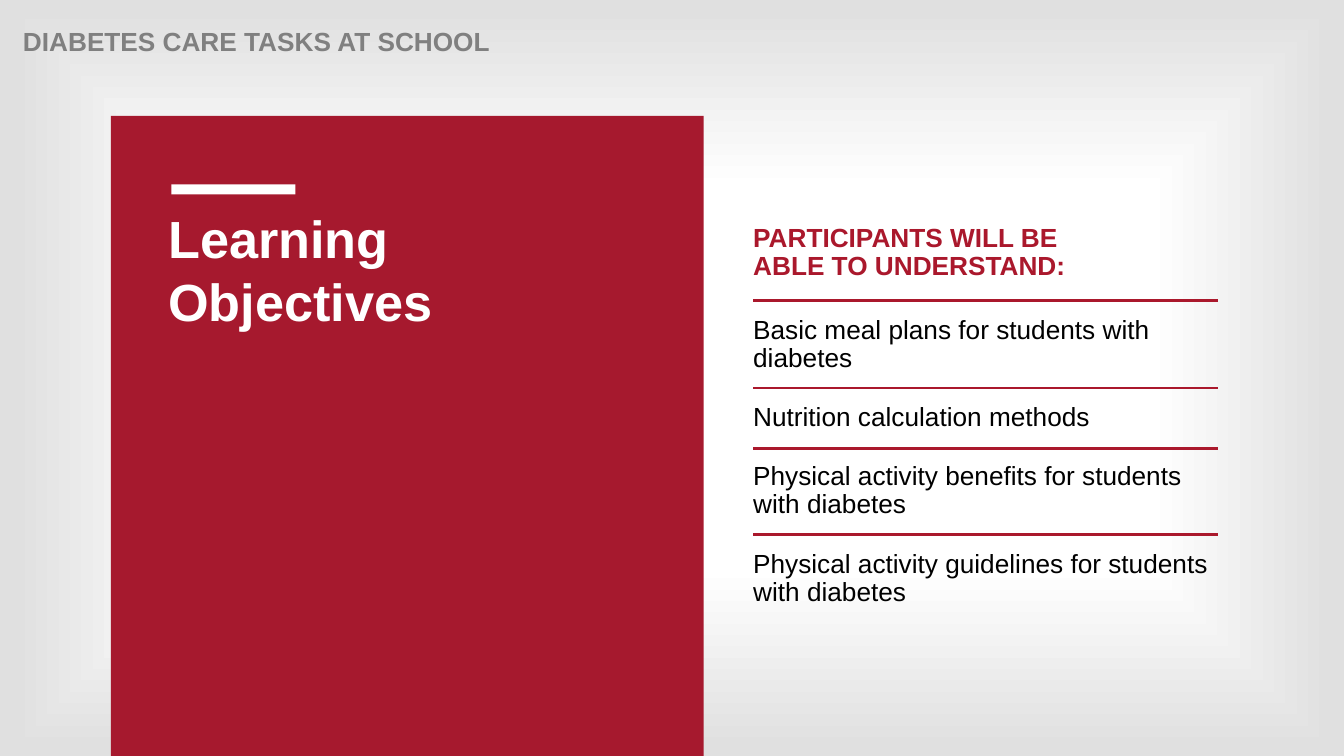
from dataclasses import dataclass

from pptx import Presentation
from pptx.dml.color import RGBColor as RGB
from pptx.enum.shapes import MSO_CONNECTOR as Conn, MSO_SHAPE as Form
from pptx.enum.text import MSO_ANCHOR as Anchor
from pptx.oxml import parse_xml as to_xml
from pptx.oxml.ns import nsdecls, qn
from pptx.slide import Slide
from pptx.util import Inches, Pt


@dataclass(frozen=True)
class Theme:
    """Colours and type sizes."""
    font: str = "Arial"
    panel: str = "A6192E"
    accent: str = "AA182C"
    white: str = "FFFFFF"
    edge: str = "E0E0E0"
    gray: str = "808080"
    black: str = "000000"
    body: float = 18.7
    title: float = 37.3
    rule: float = 2


@dataclass(frozen=True)
class Box:
    """A frame in inches."""
    left: float
    top: float
    width: float
    height: float

    def frame(self) -> tuple:
        """Return the frame as lengths."""
        return tuple(Inches(n) for n in (self.left, self.top, self.width, self.height))


@dataclass(frozen=True)
class Block:
    """A filled rectangle."""
    box: Box
    color: str


THEME = Theme()
LEFT, WIDTH = 7.47, 4.61
BLOCKS = [
    Block(Box(1.1, 1.15, 5.88, 6.35), THEME.panel),
    Block(Box(1.7, 1.83, 1.23, 0.1), THEME.white),
]
RULES = [2.98, 3.85, 4.45, 5.3]
GOALS = [
    "Basic meal plans for students with diabetes",
    "Nutrition calculation methods",
    "Physical activity benefits for students with diabetes",
    "Physical activity guidelines for students with diabetes",
]


def add_back(slide: Slide) -> None:
    """Fill the background with a gradient from the centre outwards."""
    slide.background.fill.solid()
    old = slide.element.find(".//" + qn("a:solidFill"))
    stops = "".join(
        f'<a:gs pos="{pos * 1000}"><a:srgbClr val="{color}"/></a:gs>'
        for pos, color in ((12, THEME.white), (50, THEME.white), (98, THEME.edge))
    )
    old.getparent().replace(old, to_xml(
        f'<a:gradFill {nsdecls("a")} rotWithShape="1"><a:gsLst>{stops}</a:gsLst>'
        '<a:path path="shape"><a:fillToRect l="50000" t="50000" r="50000" b="50000"/>'
        '</a:path></a:gradFill>'
    ))


def add_block(slide: Slide, block: Block) -> None:
    """Draw a plain rectangle."""
    shape = slide.shapes.add_shape(Form.RECTANGLE, *block.box.frame())
    shape.shadow.inherit = False
    shape.fill.solid()
    shape.fill.fore_color.rgb = RGB.from_string(block.color)
    shape.line.fill.background()


def add_rule(slide: Slide, top: float) -> None:
    """Draw a divider across the right column."""
    y = Inches(top)
    line = slide.shapes.add_connector(
        Conn.STRAIGHT, Inches(LEFT), y, Inches(LEFT + WIDTH), y)
    line.line.color.rgb = RGB.from_string(THEME.accent)
    line.line.width = Pt(THEME.rule)
    line.element.spPr.append(to_xml(f'<a:effectLst {nsdecls("a")}/>'))


def add_text(slide: Slide, box: Box, *lines: str, color: str, size: float = THEME.body,
             bold: bool = False, lead: float = 0.9, gap: float = 0,
             inset: bool = False) -> None:
    """Write paragraphs in one format."""
    frame = slide.shapes.add_textbox(*box.frame()).text_frame
    frame.word_wrap = True
    frame.vertical_anchor = Anchor.TOP
    if not inset:
        frame.margin_left = frame.margin_right = 0
        frame.margin_top = frame.margin_bottom = 0
    for i, line in enumerate(lines):
        para = frame.add_paragraph() if i else frame.paragraphs[0]
        para.text = line
        para.line_spacing = lead
        para.space_before = Pt(gap if i else 0)
        font = para.font
        font.name, font.size, font.bold = THEME.font, Pt(size), bold
        font.color.rgb = RGB.from_string(color)


def main() -> None:
    """Build and save the slide."""
    deck = Presentation()
    deck.slide_width, deck.slide_height = Inches(13.33), Inches(7.5)
    slide = deck.slides.add_slide(deck.slide_layouts[6])
    add_back(slide)
    for block in BLOCKS:
        add_block(slide, block)
    add_text(slide, Box(0.13, 0.24, 11, 0.28), "DIABETES CARE TASKS AT SCHOOL",
             color=THEME.gray, bold=True, inset=True)
    add_text(slide, Box(LEFT, 2.23, WIDTH, 0.6),
             "PARTICIPANTS WILL BE\vABLE TO UNDERSTAND:",
             color=THEME.accent, bold=True)
    add_text(slide, Box(1.57, 2, 4.87, 1.95), "Learning Objectives",
             color=THEME.white, size=THEME.title, bold=True, lead=1, inset=True)
    add_text(slide, Box(LEFT, 3.14, WIDTH, 2.91), *GOALS, color=THEME.black, gap=22)
    for top in RULES:
        add_rule(slide, top)
    deck.save("out.pptx")


if __name__ == "__main__":
    main()
